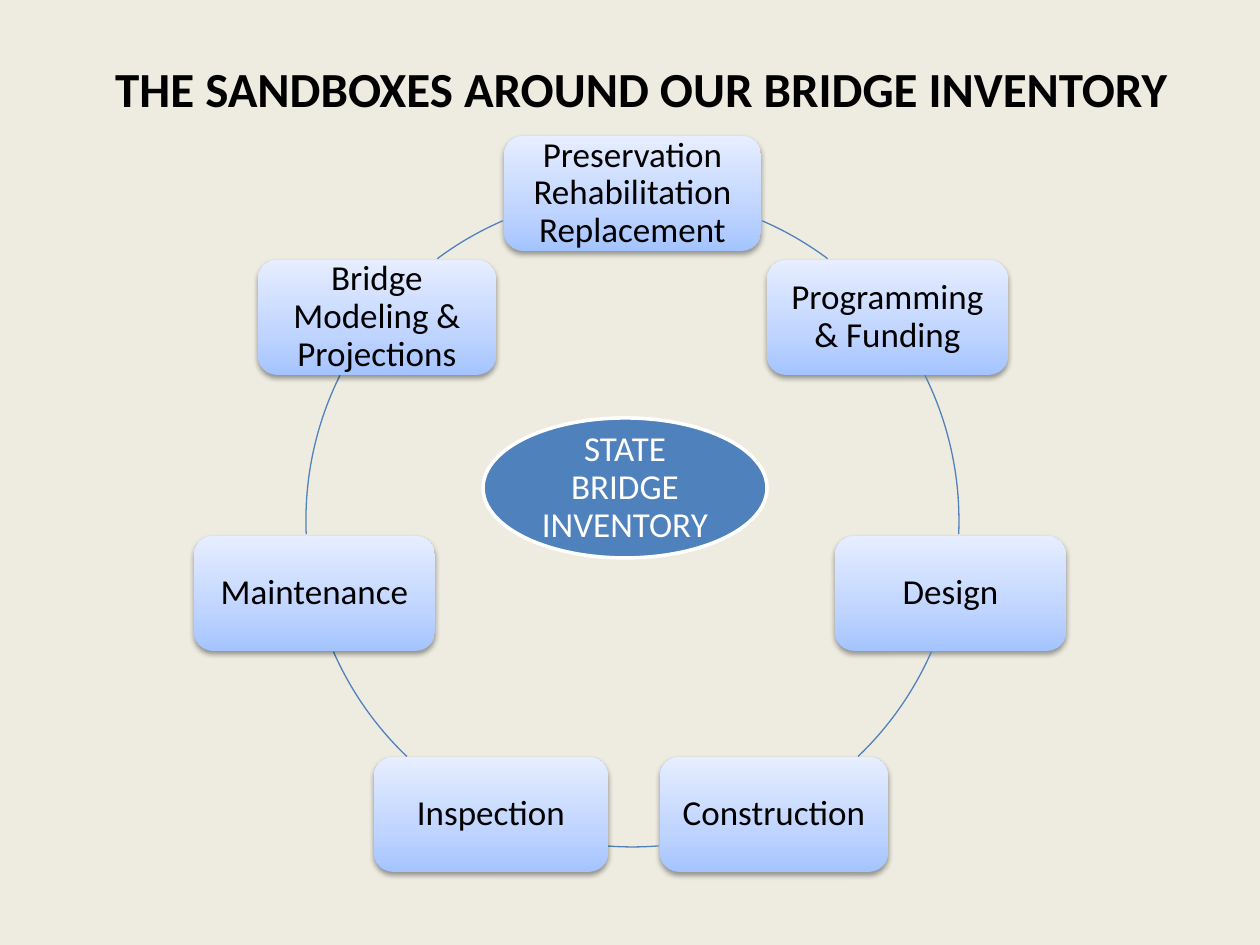
from copy import deepcopy
from dataclasses import dataclass

from lxml import etree
from pptx import Presentation
from pptx.dml.color import RGBColor
from pptx.enum.shapes import MSO_SHAPE
from pptx.enum.text import MSO_ANCHOR, MSO_AUTO_SIZE, PP_ALIGN
from pptx.util import Emu, Pt

ARC, OVAL, ROUND = MSO_SHAPE.ARC, MSO_SHAPE.OVAL, MSO_SHAPE.ROUNDED_RECTANGLE
TOP, MIDDLE = MSO_ANCHOR.TOP, MSO_ANCHOR.MIDDLE
CENTER, NO_FIT = PP_ALIGN.CENTER, MSO_AUTO_SIZE.NONE
SCALE = 914400 / 126
NS = "http://schemas.openxmlformats.org/drawingml/2006/main"
SHADOW = (
    f'<a:outerShdw xmlns:a="{NS}" blurRad="40000" dist="20000" dir="5400000"'
    ' rotWithShape="0"><a:srgbClr val="000000"><a:alpha val="38000"/>'
    "</a:srgbClr></a:outerShdw>"
)


@dataclass(frozen=True)
class Theme:
    font: str = "Calibri"
    back: str = "EEECE1"
    dark: str = "000000"
    light: str = "FFFFFF"
    blue: str = "4F81BD"
    fade: tuple = ((0, "A4C4FF"), (0.35, "BFD4FF"), (1, "E6EEFF"))
    head: int = 28
    text: int = 20


def px(n):
    return Emu(round(n * SCALE))


def rgb(code):
    return RGBColor.from_string(code)


class Deck:
    def __init__(self, theme):
        self.theme = theme
        self.file = Presentation()
        self.file.slide_width, self.file.slide_height = px(1260), px(945)
        self.slide = self.file.slides.add_slide(self.file.slide_layouts[5])
        fill = self.slide.background.fill
        fill.solid()
        fill.fore_color.rgb = rgb(theme.back)

    def label(self, shape, text, size, color, pad, anchor=MIDDLE, bold=False, lead=0.9):
        frame = shape.text_frame
        frame.text = text
        frame.word_wrap = True
        frame.auto_size = NO_FIT
        frame.vertical_anchor = anchor
        frame.margin_left = frame.margin_right = px(pad)
        frame.margin_top = frame.margin_bottom = px(min(pad, 6))
        para = frame.paragraphs[0]
        para.alignment, para.line_spacing = CENTER, lead
        font = para.font
        font.name, font.size, font.bold = self.theme.font, Pt(size), bold
        font.color.rgb = rgb(color)

    def title(self, text, x, y, w, h):
        shape = self.slide.shapes.title
        shape.left, shape.top, shape.width, shape.height = map(px, (x, y, w, h))
        self.label(shape, text, self.theme.head, self.theme.dark, 12, TOP, True, 1)

    def add(self, kind, x, y, w, h):
        shape = self.slide.shapes.add_shape(kind, *map(px, (x, y, w, h)))
        shape.shadow.inherit = False
        return shape

    def arc(self, x, y, size, start, end):
        shape = self.add(ARC, x, y, size, size)
        shape.adjustments[0], shape.adjustments[1] = start * 0.6, end * 0.6
        shape.fill.background()
        shape.line.color.rgb = rgb(self.theme.blue)
        shape.line.width = Pt(0.75)

    def box(self, text, x, y, w, h):
        shape = self.add(ROUND, x, y, w, h)
        shape.line.fill.background()
        fill = shape.fill
        fill.gradient()
        fill.gradient_angle = 90
        stops = shape._element.xpath(".//a:gsLst")[0]
        stops.append(deepcopy(stops[0]))
        for stop, (place, color) in zip(fill.gradient_stops, self.theme.fade):
            stop.position, stop.color.rgb = place, rgb(color)
        shape._element.xpath(".//a:effectLst")[0].append(etree.fromstring(SHADOW))
        self.label(shape, text, self.theme.text, self.theme.dark, 15)

    def oval(self, text, x, y, w, h):
        shape = self.add(OVAL, x, y, w, h)
        shape.fill.solid()
        shape.fill.fore_color.rgb = rgb(self.theme.blue)
        shape.line.color.rgb = rgb(self.theme.light)
        shape.line.width = Pt(2)
        self.label(shape, text, self.theme.text, self.theme.light, 4)


def main():
    deck = Deck(Theme())
    deck.title("THE SANDBOXES AROUND OUR BRIDGE INVENTORY", 53, 53, 1176, 72)
    ring = (
        ("Preservation Rehabilitation Replacement", 504, 136, 257, 293.4, 306.7),
        ("Programming & Funding", 767, 260, 241, 333.6, 2.4),
        ("Design", 835, 536, 231, 23.7, 46.3),
        ("Construction", 660, 757, 228, 85.4, 94.6),
        ("Inspection", 374, 757, 234, 133.7, 156.3),
        ("Maintenance", 194, 536, 241, 177.6, 206.4),
        ("Bridge Modeling & Projections", 258, 260, 238, 233.3, 246.6),
    )
    for text, x, y, w, start, end in ring:
        deck.box(text, x, y, w, 115)
        deck.arc(306, 194, 653, start, end)
    deck.oval("STATE BRIDGE INVENTORY", 483, 418, 284, 140)
    deck.file.save("out.pptx")


if __name__ == "__main__":
    main()
